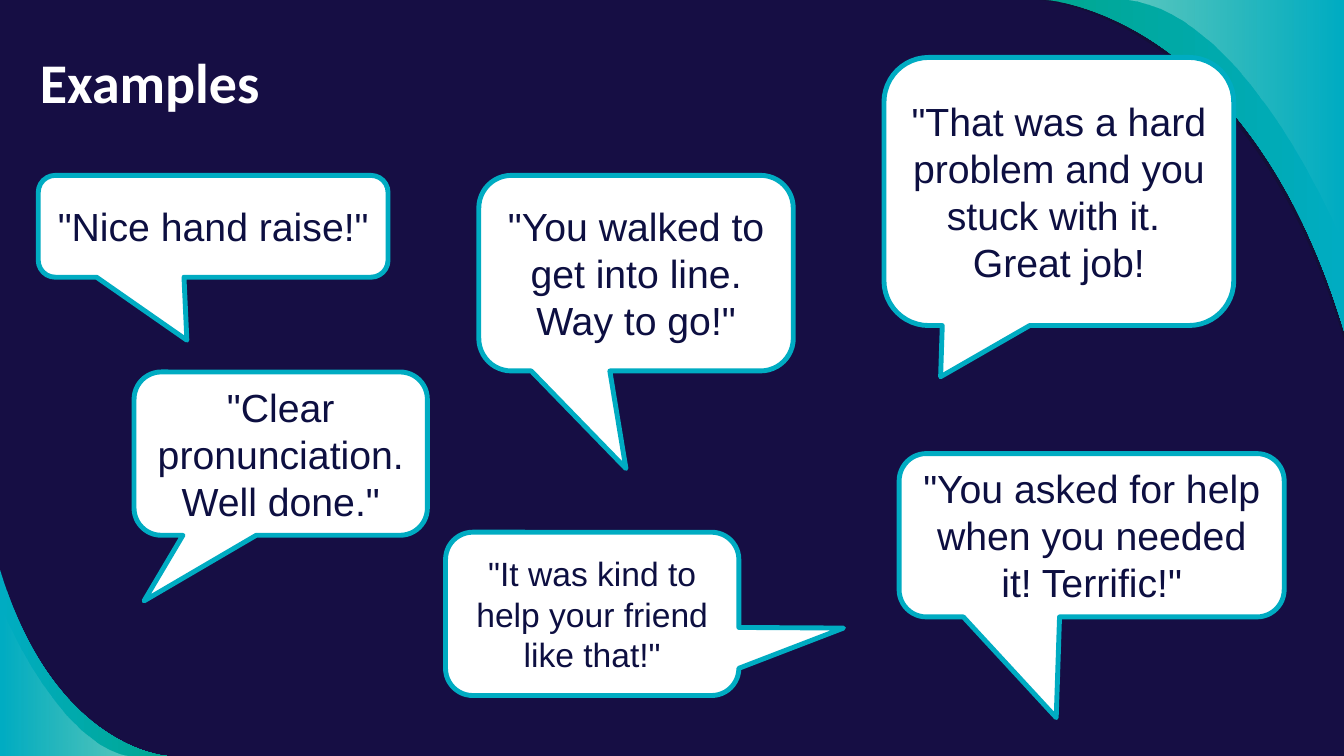
from lxml import etree
from pptx import Presentation
from pptx.dml.color import RGBColor
from pptx.enum.shapes import MSO_SHAPE
from pptx.enum.text import MSO_ANCHOR, MSO_AUTO_SIZE, PP_ALIGN
from pptx.oxml.ns import qn
from pptx.util import Inches, Pt

NAVY = RGBColor(0x16, 0x0E, 0x44)
INK = RGBColor(0x0D, 0x0F, 0x41)
SHADE = RGBColor(0x12, 0x10, 0x2F)
CYAN = RGBColor(0x00, 0xAC, 0xC2)
GREEN = RGBColor(0x00, 0xA7, 0x91)
WHITE = RGBColor(0xFF, 0xFF, 0xFF)

SLIDE_W, SLIDE_H = 40 / 3, 7.5
TOP_RIGHT = (SLIDE_W, 0)
BOTTOM_LEFT = (0, SLIDE_H)

SHADE_CURVE = [(10.31, 0), (10.31, 0), (12.35, 0.11), (SLIDE_W, 3.37)]
TOP_CURVE = [(10.38, 0), (10.38, 0), (12.38, 0.11), (SLIDE_W, 3.28)]
TOP_GLOSS_CURVE = [(11.18, 0), (12.42, 0.15), (SLIDE_W, 2.44), (SLIDE_W, 2.44)]
BOTTOM_CURVE = [(0, 5.65), (0.54, 7.44), (1.66, 7.5), (1.66, 7.5)]
BOTTOM_GLOSS_CURVE = [(0, 6.01), (0, 6.01), (0.56, 7.41), (1.32, 7.5)]

PRAISES = [
    ((0.38, 1.74, 3.47, 1.01), (-0.075, 1.119), 28, '"Nice hand raise!"'),
    ((1.33, 3.69, 2.91, 1.62), (-0.466, 0.902), 28,
     '"Clear pronunciation. Well done."'),
    ((4.42, 5.28, 2.91, 1.62), (0.857, 0.087), 24,
     '"It was kind to help your friend like that!"'),
    ((4.75, 1.74, 3.12, 1.94), (-0.032, 0.999), 28,
     '"You walked to get into line. Way to go!"'),
    ((8.92, 4.5, 3.82, 1.62), (-0.092, 1.117), 28,
     '"You asked for help when you needed it! Terrific!"'),
    ((8.77, 0.57, 3.47, 2.66), (-0.338, 0.691), 28,
     '"That was a hard problem and you stuck with it. \nGreat job!'),
]


def bend_first_edge(swoosh, bend_points):
    edge = next(swoosh.element.iter(qn("a:lnTo")))
    bend = etree.Element(qn("a:cubicBezTo"))
    for x, y in bend_points:
        point = etree.SubElement(bend, qn("a:pt"))
        point.set("x", str(x - swoosh.left))
        point.set("y", str(y - swoosh.top))
    edge.getparent().replace(edge, bend)


def add_corner(slide, curve, corner):
    start, *bend_points = [(Inches(x), Inches(y)) for x, y in curve]
    corner_point = tuple(map(Inches, corner))
    builder = slide.shapes.build_freeform(*start)
    builder.add_line_segments([bend_points[-1], corner_point], close=True)
    swoosh = builder.convert_to_shape()
    bend_first_edge(swoosh, bend_points)
    swoosh.shadow.inherit = False
    swoosh.line.fill.background()
    return swoosh


def set_opacity(swoosh, percents):
    colours = swoosh.element.spPr.iterchildren(qn("a:solidFill"), qn("a:gradFill"))
    for colour, percent in zip(next(colours).iter(qn("a:srgbClr")), percents):
        etree.SubElement(colour, qn("a:alpha")).set("val", str(percent * 1000))


def fill_solid(swoosh, colour, opacity):
    swoosh.fill.solid()
    swoosh.fill.fore_color.rgb = colour
    set_opacity(swoosh, [opacity])


def fill_gradient(swoosh, colours, opacities=()):
    swoosh.fill.gradient()
    swoosh.fill.gradient_angle = 0
    for stop, colour in zip(swoosh.fill.gradient_stops, colours):
        stop.color.rgb = colour
    set_opacity(swoosh, opacities)


def add_corners(slide):
    fill_solid(add_corner(slide, SHADE_CURVE, TOP_RIGHT), SHADE, 54)
    fill_gradient(add_corner(slide, TOP_CURVE, TOP_RIGHT), (GREEN, CYAN))
    fill_gradient(add_corner(slide, TOP_GLOSS_CURVE, TOP_RIGHT),
                  (WHITE, WHITE), (36, 0))
    fill_gradient(add_corner(slide, BOTTOM_CURVE, BOTTOM_LEFT), (CYAN, GREEN))
    fill_gradient(add_corner(slide, BOTTOM_GLOSS_CURVE, BOTTOM_LEFT),
                  (WHITE, WHITE), (0, 36))


def write_text(frame, text, font_name, size, colour, bold=False):
    frame.word_wrap = True
    frame.text = text
    for paragraph in frame.paragraphs:
        paragraph.alignment = PP_ALIGN.CENTER
        for run in paragraph.runs:
            run.font.name = font_name
            run.font.size = Pt(size)
            run.font.bold = bold
            run.font.color.rgb = colour


def set_title(slide, text):
    title = slide.shapes.title
    title.left, title.top = Inches(-0.25), Inches(0.42)
    title.width, title.height = Inches(3.47), Inches(0.77)
    frame = title.text_frame
    frame.auto_size = MSO_AUTO_SIZE.SHAPE_TO_FIT_TEXT
    frame.vertical_anchor = MSO_ANCHOR.TOP
    write_text(frame, text, "Calibri", 40, WHITE, bold=True)


def add_bubble(slide, box, tip, size, praise):
    bubble = slide.shapes.add_shape(
        MSO_SHAPE.ROUNDED_RECTANGULAR_CALLOUT, *map(Inches, box))
    bubble.adjustments[0], bubble.adjustments[1] = tip
    bubble.shadow.inherit = False
    bubble.fill.solid()
    bubble.fill.fore_color.rgb = WHITE
    bubble.line.color.rgb = CYAN
    bubble.line.width = Pt(3.5)
    bubble.text_frame.vertical_anchor = MSO_ANCHOR.MIDDLE
    write_text(bubble.text_frame, praise, "Arial", size, INK)


def main():
    deck = Presentation()
    deck.slide_width, deck.slide_height = Inches(SLIDE_W), Inches(SLIDE_H)
    slide = deck.slides.add_slide(deck.slide_layouts.get_by_name("Title Only"))
    slide.background.fill.solid()
    slide.background.fill.fore_color.rgb = NAVY
    add_corners(slide)
    set_title(slide, "Examples")
    for box, tip, size, praise in PRAISES:
        add_bubble(slide, box, tip, size, praise)
    deck.save("out.pptx")


if __name__ == "__main__":
    main()
